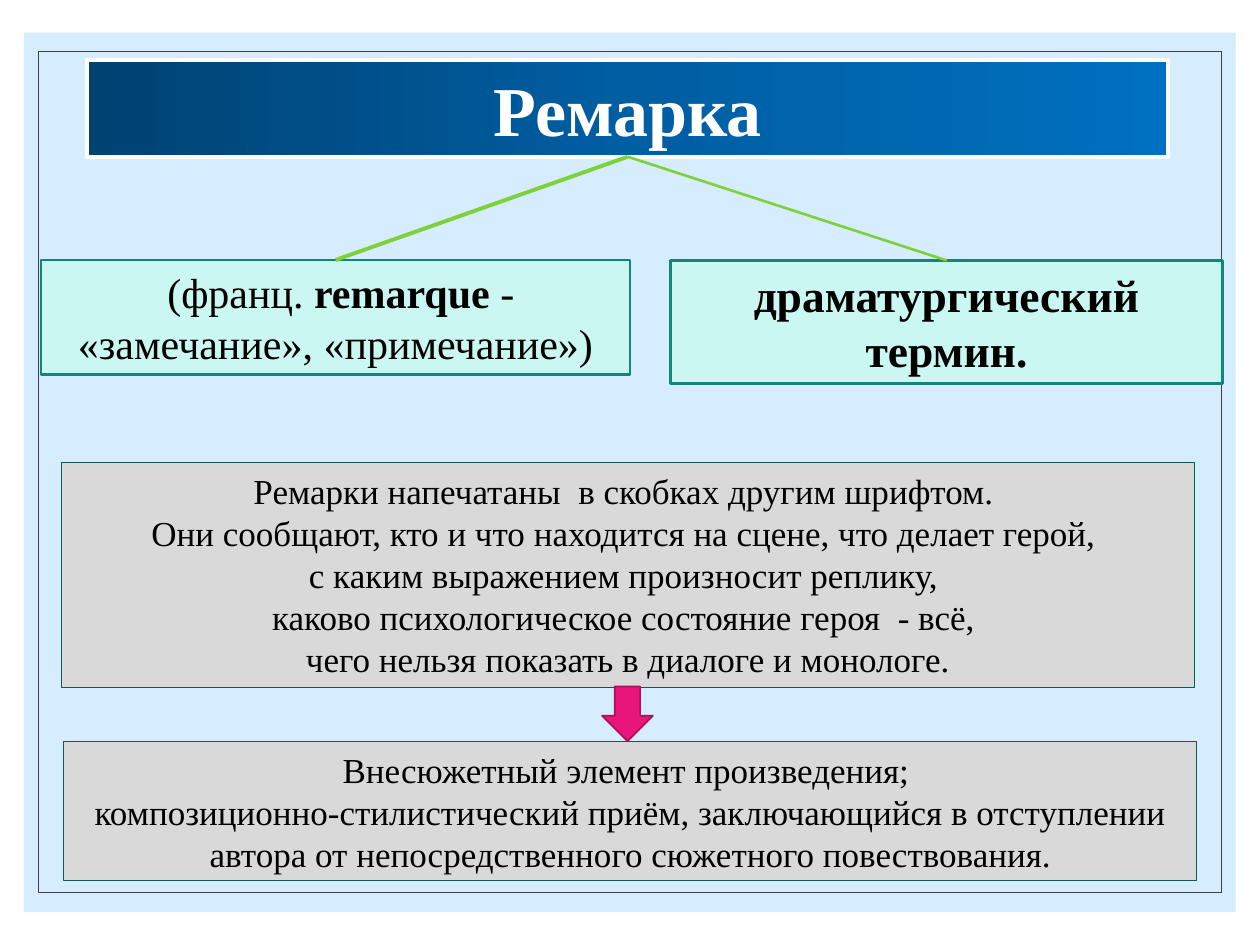
from copy import deepcopy

from lxml import etree
from pptx import Presentation
from pptx.dml.color import RGBColor
from pptx.enum.shapes import MSO_CONNECTOR, MSO_SHAPE
from pptx.enum.text import MSO_ANCHOR, PP_ALIGN
from pptx.oxml.ns import qn
from pptx.util import Cm, Pt

RECTANGLE, DOWN_ARROW = MSO_SHAPE.RECTANGLE, MSO_SHAPE.DOWN_ARROW
STRAIGHT = MSO_CONNECTOR.STRAIGHT
CENTER, MIDDLE = PP_ALIGN.CENTER, MSO_ANCHOR.MIDDLE
TOP_SIDE, BOTTOM_SIDE = 0, 2

FONT = "Times New Roman"
TITLE_GRADIENT = [(0, "004272"), (0.5, "005EA2"), (1, "0070C0")]
MINT = {"fill": "CAF7F1", "line": "138677", "width": 1.5}
GRAY = {"fill": "D9D9D9", "line": "0D5A4F", "width": 0.5}

# Paragraphs are lists of (text, bold) spans; places are left, top, width, height in cm.
TITLE = [[("Ремарка", True)]]
ORIGIN = [[(" (франц. ", False), ("remarque", True), (" - «замечание», «примечание»)", False)]]
TERM = [[("драматургический термин.", True)]]
PURPOSE = [[(line, False)] for line in (
    "Ремарки напечатаны  в скобках другим шрифтом. ",
    "Они сообщают, кто и что находится на сцене, что делает герой, ",
    "с каким выражением произносит реплику, ",
    "каково психологическое состояние героя  - всё, ",
    "чего нельзя показать в диалоге и монологе.",
)]
DEFINITION = [[(line, False)] for line in (
    "Внесюжетный элемент произведения; ",
    "композиционно-стилистический приём, заключающийся в отступлении "
    "автора от непосредственного сюжетного повествования.",
)]


def color(value):
    return RGBColor.from_string(value)


def add_box(page, place, fill=None, line=None, width=0, kind=RECTANGLE):
    box = page.shapes.add_shape(kind, *(Cm(length) for length in place))
    box.shadow.inherit = False
    if fill:
        box.fill.solid()
        box.fill.fore_color.rgb = color(fill)
    else:
        box.fill.background()
    if line:
        box.line.color.rgb = color(line)
        box.line.width = Pt(width)
    else:
        box.line.fill.background()
    return box


def write(box, paragraphs, size, font_color="000000"):
    frame = box.text_frame
    frame.word_wrap = True
    frame.vertical_anchor = MIDDLE
    for index, spans in enumerate(paragraphs):
        para = frame.add_paragraph() if index else frame.paragraphs[0]
        para.alignment = CENTER
        for text, bold in spans:
            span = para.add_run()
            span.text = text
            span.font.name = FONT
            span.font.size = Pt(size)
            span.font.bold = bold
            span.font.color.rgb = color(font_color)


def fill_gradient(box, stops):
    """Fill from left to right, adding stops to the two that a new gradient has."""
    box.fill.gradient()
    box.fill.gradient_angle = 0
    stop_list = box._element.spPr.find(qn("a:gradFill")).find(qn("a:gsLst"))
    while len(stop_list) < len(stops):
        stop_list.append(deepcopy(stop_list[0]))
    for stop, (position, value) in zip(box.fill.gradient_stops, stops):
        stop.position = position
        stop.color.rgb = color(value)


def join(page, upper, lower, width):
    branch = page.shapes.add_connector(STRAIGHT, 0, 0, 0, 0)
    branch.begin_connect(upper, BOTTOM_SIDE)
    branch.end_connect(lower, TOP_SIDE)
    branch.line.color.rgb = color("7FD13B")
    branch.line.width = Pt(width)
    etree.SubElement(branch._element.spPr, qn("a:effectLst"))


def main():
    deck = Presentation()
    deck.slide_width, deck.slide_height = Cm(25.4), Cm(19.05)
    page = deck.slides.add_slide(deck.slide_layouts[6])

    add_box(page, (0.48, 0.66, 24.43, 17.73), fill="D6ECFF")
    add_box(page, (0.77, 1.03, 23.85, 16.97), line="404040", width=0.5)

    title = add_box(page, (1.76, 1.21, 21.79, 1.95), line="FFFFFF", width=2.25)
    fill_gradient(title, TITLE_GRADIENT)
    write(title, TITLE, 40, "FFFFFF")

    origin = add_box(page, (0.83, 5.24, 11.87, 2.31), **MINT)
    write(origin, ORIGIN, 24)
    term = add_box(page, (13.52, 5.25, 11.13, 2.48), **MINT)
    write(term, TERM, 26)
    write(add_box(page, (1.24, 9.32, 22.84, 4.53), **GRAY), PURPOSE, 20)
    write(add_box(page, (1.29, 14.94, 22.84, 2.82), **GRAY), DEFINITION, 20)

    add_box(page, (12.14, 13.84, 1.02, 1.1), "EA157A", "AD105A", 1, DOWN_ARROW)
    join(page, title, origin, 2.25)
    join(page, title, term, 1.5)

    deck.save("out.pptx")


if __name__ == "__main__":
    main()
